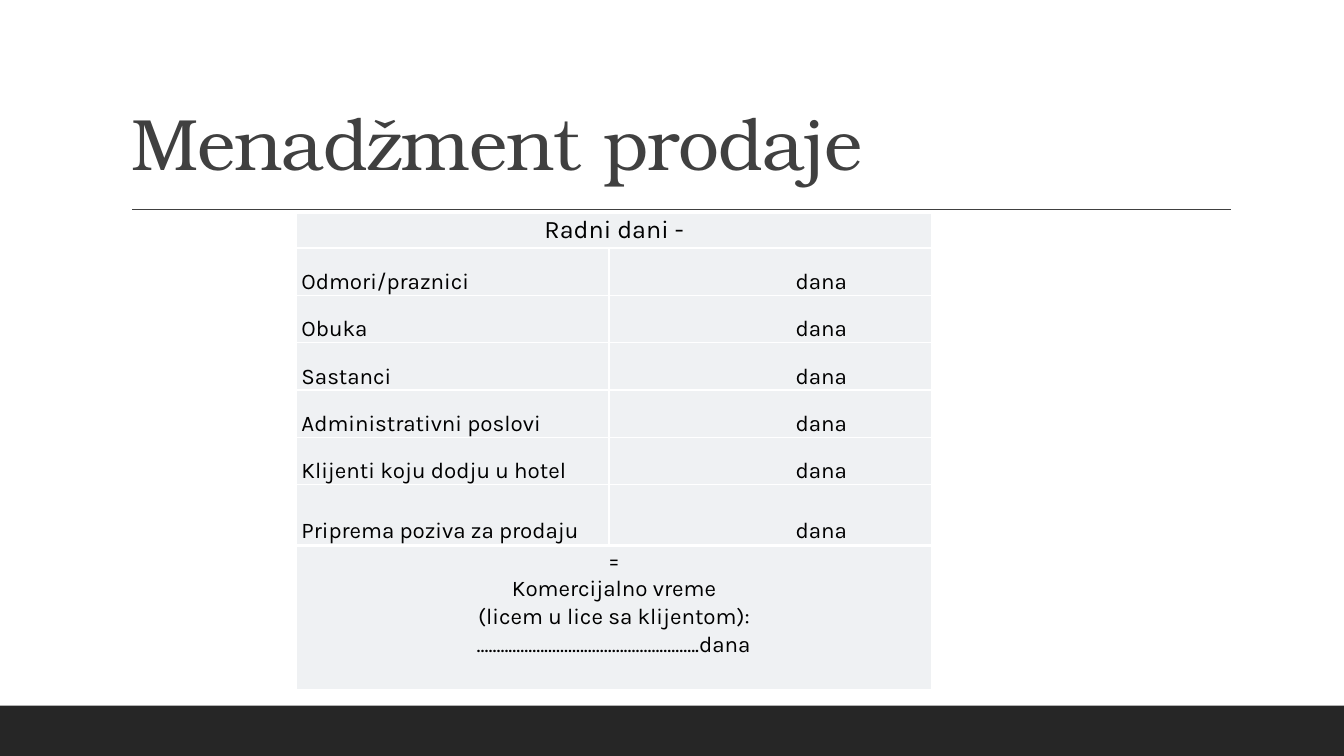
"""Build the sales management slide with its working-days tables."""
import pptx
import pptx.dml.color
import pptx.enum.shapes
import pptx.enum.text
import pptx.oxml
import pptx.oxml.ns
import pptx.util
from dataclasses import dataclass

Inches = pptx.util.Inches
Pt = pptx.util.Pt
Color = pptx.dml.color.RGBColor.from_string
Align = pptx.enum.text.PP_ALIGN
Anchor = pptx.enum.text.MSO_ANCHOR


@dataclass(frozen=True)
class Theme:
    heading_font: str = "TeX Gyre Bonum"
    body_font: str = "Karla"
    title_size: int = 52
    header_size: int = 18
    body_size: int = 16
    ink: str = "404040"
    text: str = "000000"
    footer: str = "262626"
    cell: str = "EFF1F3"
    border: str = "FFFFFF"


theme = Theme()


def add_grid(page, top, columns, rows):
    grid = page.shapes.add_table(len(rows), len(columns), Inches(2.94), Inches(top),
                                 Inches(sum(columns)), Inches(sum(rows))).table
    grid.first_row = grid.horz_banding = False
    for column, width in zip(grid.columns, columns):
        column.width = Inches(width)
    for row, height in zip(grid.rows, rows):
        row.height = Inches(height)
    return grid


def fill_cell(cell, lines, size, align, anchor, spacing=1.0, right=0.05):
    properties = cell._tc.get_or_add_tcPr()
    for side in "LRTB":
        properties.append(pptx.oxml.parse_xml(
            f'<a:ln{side} {pptx.oxml.ns.nsdecls("a")} w="12700"><a:solidFill>'
            f'<a:srgbClr val="{theme.border}"/></a:solidFill></a:ln{side}>'))
    cell.fill.solid()
    cell.fill.fore_color.rgb = Color(theme.cell)
    layout = {"margin_left": Inches(0.05), "margin_right": Inches(right),
              "margin_top": 0, "margin_bottom": 0, "vertical_anchor": anchor}
    for name, value in layout.items():
        setattr(cell, name, value)
    cell.text = "\n".join(lines)
    for para in cell.text_frame.paragraphs:
        para.alignment = align
        para.line_spacing = spacing
        for span in para.runs:
            span.font.name = theme.body_font
            span.font.size = Pt(size)
            span.font.color.rgb = Color(theme.text)


deck = pptx.Presentation()
deck.slide_width = Inches(13.33)
deck.slide_height = Inches(7.5)
page = deck.slides.add_slide(deck.slide_layouts[5])

footer = page.shapes.add_shape(pptx.enum.shapes.MSO_SHAPE.RECTANGLE,
                               0, Inches(7), deck.slide_width, Inches(0.5))
footer.shadow.inherit = False
footer.fill.solid()
footer.fill.fore_color.rgb = Color(theme.footer)
footer.line.fill.background()

rule = page.shapes.add_connector(pptx.enum.shapes.MSO_CONNECTOR.STRAIGHT,
                                 Inches(1.31), Inches(2.08), Inches(12.21), Inches(2.08))
rule.line.color.rgb = Color(theme.ink)
rule.line.width = Pt(1)
rule._element.spPr.append(
    pptx.oxml.parse_xml(f'<a:effectLst {pptx.oxml.ns.nsdecls("a")}/>'))

title = page.shapes.title
frame = {"left": 1.2, "top": 0.31, "width": 11, "height": 1.59}
for name, value in frame.items():
    setattr(title, name, Inches(value))
title.text_frame.text = "Menadžment prodaje"
title.text_frame.vertical_anchor = Anchor.BOTTOM
title.text_frame.auto_size = pptx.enum.text.MSO_AUTO_SIZE.NONE
para = title.text_frame.paragraphs[0]
para.alignment = Align.LEFT
para.line_spacing = 0.9
span = para.runs[0]
span.font.name = theme.heading_font
span.font.size = Pt(theme.title_size)
span.font.color.rgb = Color(theme.ink)
span.font._element.set("spc", "-50")

header = add_grid(page, 2.12, [6.3], [0.34])
fill_cell(header.cell(0, 0), ["Radni dani -"], theme.header_size,
          Align.CENTER, Anchor.TOP, 1.07)

activities = ["Odmori/praznici", "Obuka", "Sastanci", "Administrativni poslovi",
              "Klijenti koju dodju u hotel", "Priprema poziva za prodaju"]
days = add_grid(page, 2.46, [3.1, 3.2], [0.47] * 5 + [0.59])
for index, activity in enumerate(activities):
    fill_cell(days.cell(index, 0), [activity], theme.body_size, Align.LEFT, Anchor.BOTTOM)
    fill_cell(days.cell(index, 1), ["dana"], theme.body_size, Align.RIGHT, Anchor.BOTTOM,
              right=0.84)

total = add_grid(page, 5.42, [6.3], [1.42])
fill_cell(total.cell(0, 0),
          ["=", "Komercijalno vreme",
           "(licem u lice sa klijentom):\v" + "." * 56 + "dana"],
          theme.body_size, Align.CENTER, Anchor.TOP, 1.07)

deck.save("out.pptx")
